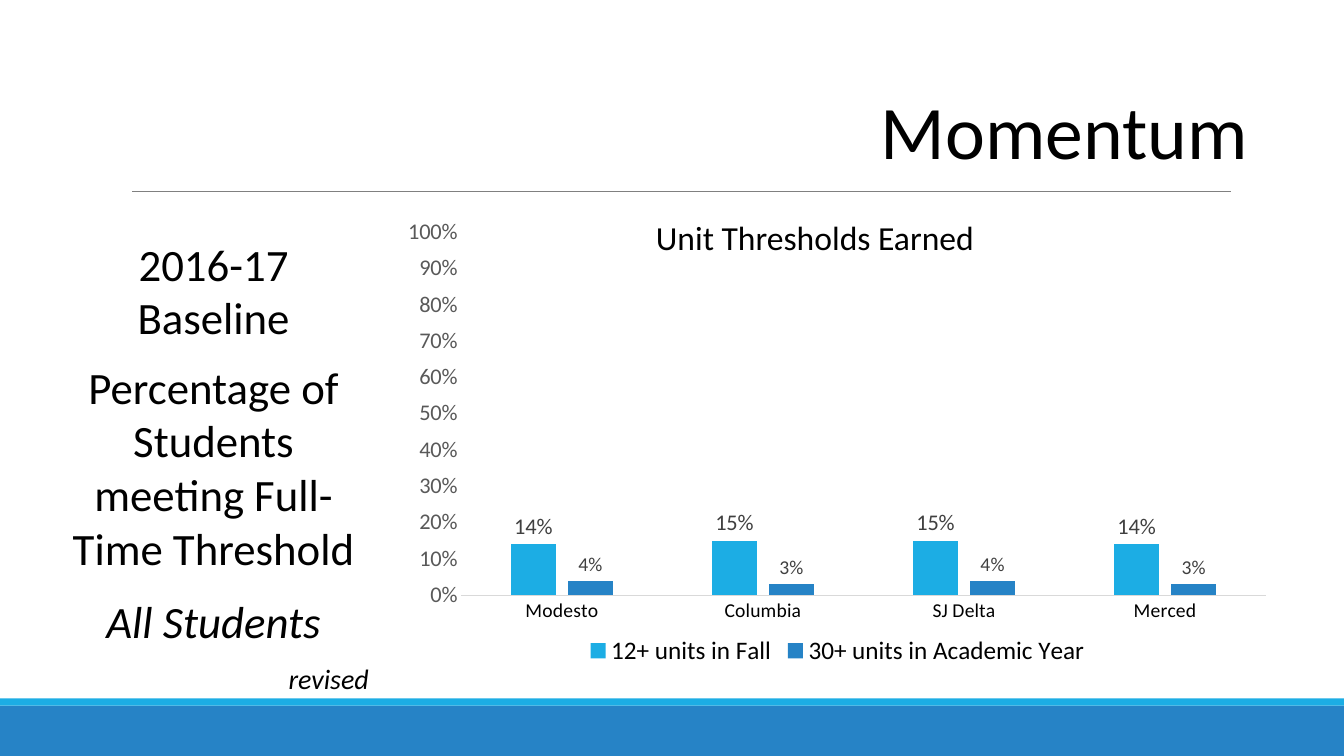
"""Build the Momentum slide with its unit threshold chart."""
from dataclasses import dataclass

from lxml.etree import SubElement
from pptx import Presentation
from pptx.chart.data import CategoryChartData
from pptx.dml.color import RGBColor
from pptx.enum.chart import XL_CHART_TYPE, XL_LABEL_POSITION, XL_LEGEND_POSITION, XL_TICK_MARK
from pptx.enum.shapes import MSO_CONNECTOR, MSO_SHAPE
from pptx.enum.text import MSO_ANCHOR, PP_ALIGN
from pptx.oxml.ns import qn
from pptx.util import Cm, Pt


@dataclass(frozen=True)
class Theme:
    font: str = "Calibri"
    text: str = "000000"
    axis_text: str = "595959"
    label_text: str = "404040"
    rule: str = "808080"
    axis_line: str = "D9D9D9"
    light_blue: str = "1CADE4"
    blue: str = "2683C6"
    title: int = 54
    body: int = 32
    heading: int = 24
    note: int = 20
    legend: int = 18
    values: int = 16
    categories: int = 14


@dataclass(frozen=True)
class Box:
    left: float
    top: float
    width: float
    height: float

    def emu(self) -> tuple:
        return Cm(self.left), Cm(self.top), Cm(self.width), Cm(self.height)


@dataclass(frozen=True)
class Line:
    text: str
    size: int
    align: PP_ALIGN = PP_ALIGN.CENTER
    italic: bool = False
    before: float = 0


@dataclass(frozen=True)
class Band:
    box: Box
    color: str


@dataclass(frozen=True)
class Series:
    name: str
    values: tuple
    color: str
    label_size: int


THEME = Theme()
WIDTH, HEIGHT = 33.87, 19.05
BANDS = (
    Band(Box(0, 17.78, WIDTH, 1.27), THEME.blue),
    Band(Box(0, 17.6, WIDTH, 0.18), THEME.light_blue),
)
TITLE = Line("Momentum", THEME.title, PP_ALIGN.RIGHT)
HEADING = Line("Unit Thresholds Earned", THEME.heading, PP_ALIGN.LEFT)
SIDEBAR = (
    Line("2016-17 Baseline", THEME.body),
    Line("Percentage of Students meeting Full-Time Threshold", THEME.body, before=11),
    Line("All Students", THEME.body, italic=True, before=14),
    Line("revised", THEME.note, PP_ALIGN.RIGHT, True, 9.5),
)
COLLEGES = ("Modesto", "Columbia", "SJ Delta", "Merced")
SERIES = (
    Series("12+ units in Fall", (0.14, 0.15, 0.15, 0.14), THEME.light_blue, THEME.values),
    Series("30+ units in Academic Year", (0.04, 0.03, 0.04, 0.03), THEME.blue, THEME.categories),
)
PLOT = {"x": 0.067, "y": 0.045, "w": 0.926, "h": 0.79}


def rgb(color: str) -> RGBColor:
    return RGBColor.from_string(color)


def style_font(font, size: int, color: str = THEME.text) -> None:
    font.name, font.size = THEME.font, Pt(size)
    font.color.rgb = rgb(color)


def write(tf, lines: tuple) -> None:
    tf.word_wrap = True
    tf.vertical_anchor = MSO_ANCHOR.TOP
    tf.text = "\n".join(line.text for line in lines)
    for p, line in zip(tf.paragraphs, lines):
        p.alignment, p.space_before = line.align, Pt(line.before)
        for r in p.runs:
            style_font(r.font, line.size)
            r.font.italic = line.italic


def add_text(s, box: Box, lines: tuple) -> None:
    write(s.shapes.add_textbox(*box.emu()).text_frame, lines)


def add_band(s, band: Band) -> None:
    sp = s.shapes.add_shape(MSO_SHAPE.RECTANGLE, *band.box.emu())
    sp.shadow.inherit = False
    sp.fill.solid()
    sp.fill.fore_color.rgb = rgb(band.color)
    sp.line.fill.background()


def add_rule(s, left: float, right: float, y: float) -> None:
    rule = s.shapes.add_connector(MSO_CONNECTOR.STRAIGHT, Cm(left), Cm(y), Cm(right), Cm(y))
    rule.line.color.rgb = rgb(THEME.rule)
    rule.line.width = Pt(0.5)
    SubElement(rule._element.spPr, qn("a:effectLst"))


def set_plot_layout(chart) -> None:
    area = chart._chartSpace.chart.plotArea
    for old in area.findall(qn("c:layout")):
        area.remove(old)
    layout = SubElement(area, qn("c:layout"))
    area.insert(0, layout)
    manual = SubElement(layout, qn("c:manualLayout"))
    settings = {"layoutTarget": "inner", "xMode": "edge", "yMode": "edge", **PLOT}
    for tag, value in settings.items():
        SubElement(manual, qn(f"c:{tag}")).set("val", str(value))


def style_axes(chart) -> None:
    cat, val = chart.category_axis, chart.value_axis
    for axis in (cat, val):
        axis.major_tick_mark = axis.minor_tick_mark = XL_TICK_MARK.NONE
        axis.has_major_gridlines = False
    style_font(cat.tick_labels.font, THEME.categories)
    cat.format.line.color.rgb = rgb(THEME.axis_line)
    cat.format.line.width = Pt(0.75)
    style_font(val.tick_labels.font, THEME.values, THEME.axis_text)
    val.tick_labels.number_format = "0%"
    val.tick_labels.number_format_is_linked = False
    val.format.line.fill.background()
    val.minimum_scale, val.maximum_scale, val.major_unit = 0, 1, 0.1


def add_unit_chart(s, box: Box) -> None:
    data = CategoryChartData(number_format="0%")
    data.categories = COLLEGES
    for item in SERIES:
        data.add_series(item.name, item.values)
    chart = s.shapes.add_chart(XL_CHART_TYPE.COLUMN_CLUSTERED, *box.emu(), data).chart
    style_font(chart.font, 10)
    chart.has_title = False
    chart.has_legend = True
    chart.legend.position = XL_LEGEND_POSITION.BOTTOM
    chart.legend.include_in_layout = False
    style_font(chart.legend.font, THEME.legend)
    style_axes(chart)
    plot = chart.plots[0]
    plot.gap_width, plot.overlap, plot.vary_by_categories = 219, -27, False
    for series, item in zip(plot.series, SERIES):
        series.format.fill.solid()
        series.format.fill.fore_color.rgb = rgb(item.color)
        labels = series.data_labels
        labels.show_value = True
        labels.position = XL_LABEL_POSITION.OUTSIDE_END
        labels.number_format = "0%"
        labels.number_format_is_linked = False
        style_font(labels.font, item.label_size, THEME.label_text)
    set_plot_layout(chart)


def main() -> None:
    prs = Presentation()
    prs.slide_width, prs.slide_height = Cm(WIDTH), Cm(HEIGHT)
    s = prs.slides.add_slide(prs.slide_layouts[5])
    for band in BANDS:
        add_band(s, band)
    add_rule(s, 3.33, 31.01, 4.83)
    title = s.shapes.title
    title.left, title.top, title.width, title.height = Box(13.82, 1.98, 17.88, 2.57).emu()
    write(title.text_frame, (TITLE,))
    add_text(s, Box(1.22, 5.83, 8.33, 12), SIDEBAR)
    add_text(s, Box(16.28, 5.33, 9.65, 1.27), (HEADING,))
    add_unit_chart(s, Box(10.16, 5.33, 21.89, 11.58))
    prs.save("out.pptx")


if __name__ == "__main__":
    main()
